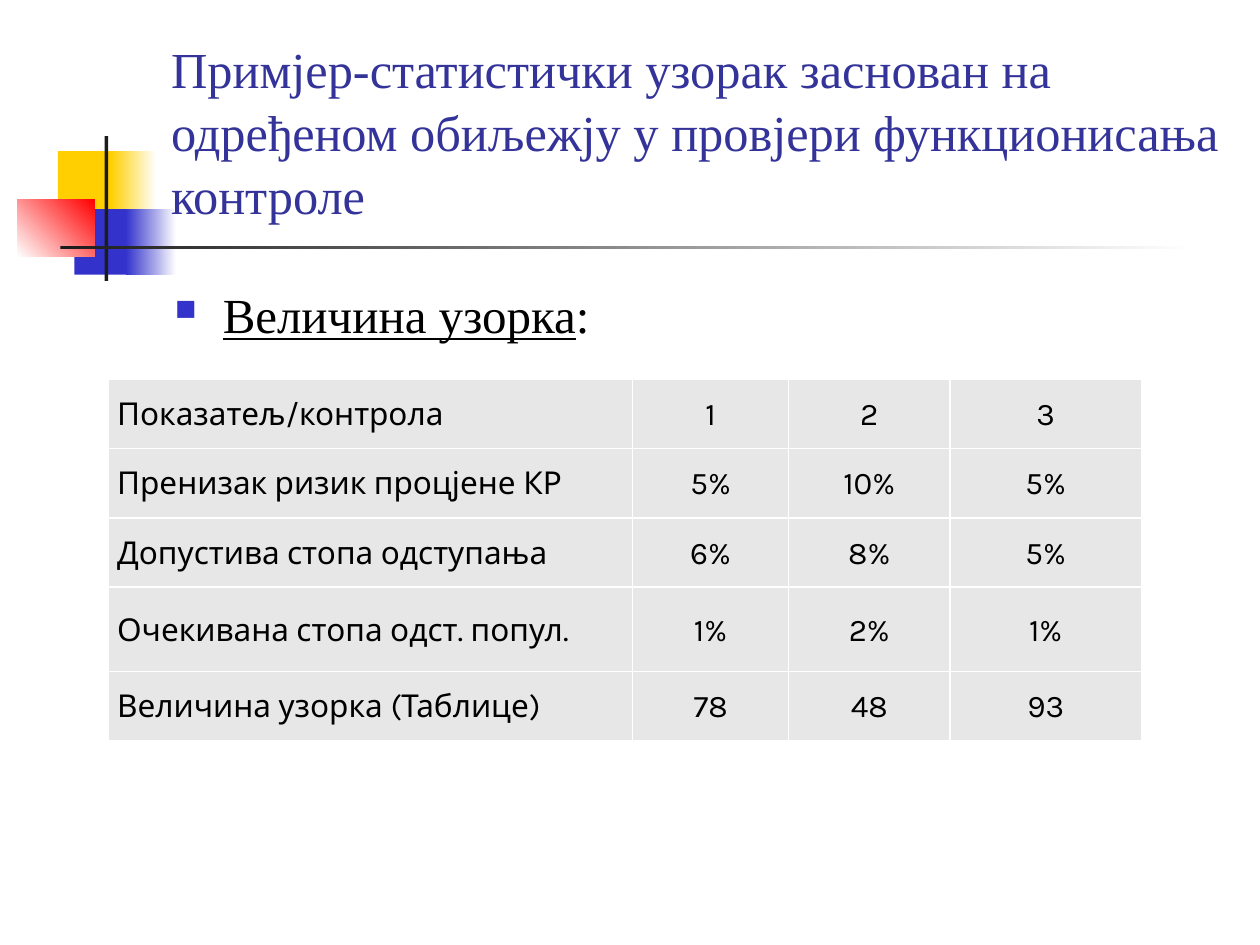
from lxml.etree import SubElement
from pptx import Presentation
from pptx.dml.color import RGBColor
from pptx.enum.shapes import MSO_SHAPE
from pptx.enum.text import MSO_ANCHOR, PP_ALIGN
from pptx.oxml import parse_xml
from pptx.oxml.ns import nsdecls, qn
from pptx.util import Inches, Pt

COLORS = {
    "yellow": "FFCF01", "blue": "3333CC", "red": "FF0000", "dark": "1C1C1C",
    "white": "FFFFFF", "title": "333399", "text": "000000", "cell": "E7E7E7",
}


def rgb(name):
    return RGBColor.from_string(COLORS[name])


def style_font(font, name, size, color):
    font.name = name
    font.size = Pt(size)
    font.color.rgb = rgb(color)


prs = Presentation()
prs.slide_width, prs.slide_height = Inches(10), Inches(7.5)
slide = prs.slides.add_slide(prs.slide_layouts[6])

# Decoration: left, top, width, height, start colour, end colour, angle
decoration = [
    (0.46, 1.2, 0.48, 0.52, "yellow", None, 0),
    (0.88, 1.2, 0.36, 0.52, "yellow", "white", 0),
    (0.59, 1.66, 0.46, 0.52, "blue", None, 0),
    (1, 1.66, 0.4, 0.52, "blue", "white", 0),
    (0.14, 1.58, 0.61, 0.46, "white", "red", 45),
    (0.83, 1.08, 0.03, 1.15, "dark", None, 0),
    (0.48, 1.95, 9, 0.03, "dark", "white", 0),
]
for *box, start, end, angle in decoration:
    block = slide.shapes.add_shape(MSO_SHAPE.RECTANGLE, *map(Inches, box))
    block.shadow.inherit = False
    block.line.fill.background()
    if end is None:
        block.fill.solid()
        block.fill.fore_color.rgb = rgb(start)
    else:
        block.fill.gradient()
        block.fill.gradient_angle = angle
        for stop, color in zip(block.fill.gradient_stops, (start, end)):
            stop.color.rgb = rgb(color)

# Title
title = slide.shapes.add_textbox(Inches(1.26), Inches(0.23), Inches(8.52), Inches(1.6)).text_frame
title.word_wrap = True
title.vertical_anchor = MSO_ANCHOR.BOTTOM
title.text = ("Примјер-статистички узорак заснован на одређеном обиљежју "
              "у провјери функционисања контроле")
title.paragraphs[0].line_spacing = 1.04
style_font(title.paragraphs[0].runs[0].font, "Times New Roman", 28.8, "title")

# Bulleted heading
body = slide.shapes.add_textbox(Inches(1.29), Inches(2.21), Inches(8.5), Inches(4.5)).text_frame
body.word_wrap = True
heading = body.paragraphs[0]
bullet = heading._p.get_or_add_pPr()
bullet.set("marL", str(Inches(0.38)))
bullet.set("indent", str(-Inches(0.38)))
bullet_color = SubElement(bullet, qn("a:buClr"))
SubElement(bullet_color, qn("a:srgbClr"), val=COLORS["blue"])
SubElement(bullet, qn("a:buSzPct"), val="60000")
SubElement(bullet, qn("a:buChar"), char="■")
for words, underlined in (("Величина узорка", True), (":", False)):
    run = heading.add_run()
    run.text = words
    style_font(run.font, "Times New Roman", 28, "text")
    run.font.underline = underlined

# Sample size table
rows = [
    ("Показатељ/контрола", "1", "2", "3"),
    ("Пренизак ризик процјене КР", "5%", "10%", "5%"),
    ("Допустива стопа одступања", "6%", "8%", "5%"),
    ("Очекивана стопа одст. попул.", "1%", "2%", "1%"),
    ("Величина узорка (Таблице)", "78", "48", "93"),
]
column_widths = (4.16, 1.24, 1.28, 1.52)
row_heights = (0.55, 0.55, 0.55, 0.67, 0.55)
sample_table = slide.shapes.add_table(
    len(rows), len(column_widths), Inches(0.86), Inches(3.01), Inches(8.21), Inches(2.85)).table
for column, width in zip(sample_table.columns, column_widths):
    column.width = Inches(width)
for row, height in zip(sample_table.rows, row_heights):
    row.height = Inches(height)

for r, values in enumerate(rows):
    for c, value in enumerate(values):
        cell = sample_table.cell(r, c)
        cell.text = value
        cell.vertical_anchor = MSO_ANCHOR.MIDDLE
        cell.margin_left = cell.margin_right = Inches(0.07)
        cell.margin_top = cell.margin_bottom = 0
        paragraph = cell.text_frame.paragraphs[0]
        paragraph.line_spacing = 1.07
        paragraph.alignment = PP_ALIGN.CENTER if c else PP_ALIGN.LEFT
        style_font(paragraph.runs[0].font, "Karla", 18, "text")
        run_font = paragraph.runs[0].font
        run_font.bold = False
        for side in ("lnL", "lnR", "lnT", "lnB"):
            cell._tc.get_or_add_tcPr().append(parse_xml(
                f'<a:{side} {nsdecls("a")} w="{Pt(1)}"><a:solidFill>'
                f'<a:srgbClr val="{COLORS["white"]}"/></a:solidFill></a:{side}>'))
        cell.fill.solid()
        cell.fill.fore_color.rgb = rgb("cell")

prs.save("out.pptx")
